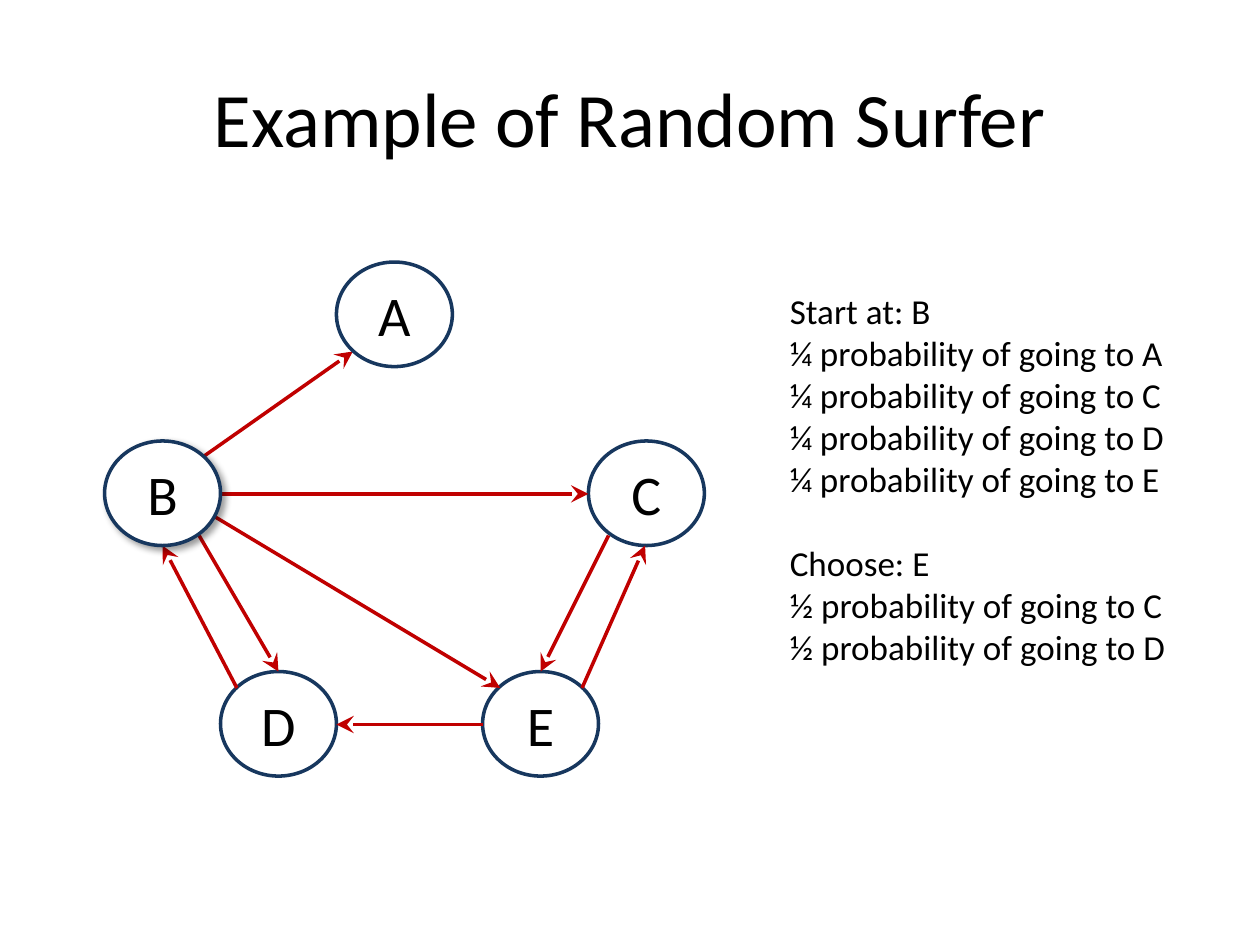
import pptx
import pptx.dml.color
import pptx.enum.shapes
import pptx.enum.text
import pptx.oxml
import pptx.oxml.ns
import pptx.util

Inches = pptx.util.Inches
Pt = pptx.util.Pt
ALIGN = pptx.enum.text.PP_ALIGN
ANCHOR = pptx.enum.text.MSO_ANCHOR

COLORS = {"text": "000000", "node": "FFFFFF", "rim": "17375E", "arrow": "C00000"}
NODE_W, NODE_H = 0.92, 0.83

# Left and top of each page in the graph
NODES = {"A": (2.67, 2.08), "C": (4.67, 3.5), "D": (1.75, 5.33), "E": (3.83, 5.33)}
START = (0.83, 3.5)

# Links between pages: from x, y to x, y
FIRST = (1.62, 3.62, 2.8, 2.79)     # B to A
LINKS = [
    (1.75, 3.92, 4.67, 3.92),       # B to C
    (1.58, 4.25, 2.21, 5.33),       # B to D
    (1.88, 5.46, 1.29, 4.33),       # D to B
    (3.83, 5.75, 2.67, 5.75),       # E to D
    (4.83, 4.25, 4.29, 5.33),       # C to E
    (4.62, 5.46, 5.12, 4.33),       # E to C
    (1.67, 4.08, 3.97, 5.46),       # B to E
]

STEPS = [
    ["Start at: B"] + [f"¼ probability of going to {page}" for page in "ACDE"],
    ["Choose: E", "½ probability of going to C\v½ probability of going to D"],
]


def color(name):
    return pptx.dml.color.RGBColor.from_string(COLORS[name])


def assign(item, values):
    for key, value in values.items():
        setattr(item, key, value)


def style(para, size, align):
    para.alignment = align
    assign(para.font, {"size": Pt(size), "name": "Calibri"})
    para.font.color.rgb = color("text")


def add_xml(parent, body):
    space = pptx.oxml.ns.nsdecls("a")
    parent.append(pptx.oxml.parse_xml(body.replace("XMLNS", space, 1)))


def add_title(slide, text):
    title = slide.shapes.title
    assign(title, {"left": Inches(0.5), "top": Inches(0.3),
                   "width": Inches(9), "height": Inches(1.25)})
    frame = title.text_frame
    frame.text = text
    frame.vertical_anchor = ANCHOR.MIDDLE
    style(frame.paragraphs[0], 44, ALIGN.CENTER)


def add_node(slide, name, left, top):
    node = slide.shapes.add_shape(
        pptx.enum.shapes.MSO_SHAPE.OVAL,
        Inches(left), Inches(top), Inches(NODE_W), Inches(NODE_H))
    node.shadow.inherit = False
    node.fill.solid()
    node.fill.fore_color.rgb = color("node")
    node.line.color.rgb = color("rim")
    node.line.width = Pt(2)
    frame = node.text_frame
    assign(frame, {"text": name, "vertical_anchor": ANCHOR.MIDDLE,
                   "margin_left": 0, "margin_right": 0,
                   "margin_top": 0, "margin_bottom": 0})
    style(frame.paragraphs[0], 32, ALIGN.CENTER)
    return node


def add_shadow(node):
    effects = node._element.spPr.find(pptx.oxml.ns.qn("a:effectLst"))
    add_xml(effects,
            f'<a:outerShdw XMLNS blurRad="{Pt(4)}" dist="{Pt(3)}" dir="2700000" '
            'algn="tl" rotWithShape="0"><a:srgbClr val="000000">'
            '<a:alpha val="40000"/></a:srgbClr></a:outerShdw>')


def add_link(slide, ends):
    link = slide.shapes.add_connector(
        pptx.enum.shapes.MSO_CONNECTOR.STRAIGHT, *map(Inches, ends))
    link.line.color.rgb = color("arrow")
    link.line.width = Pt(2)
    add_xml(link.line._get_or_add_ln(),
            '<a:tailEnd XMLNS type="stealth" w="lg" len="lg"/>')
    add_xml(link._element.spPr, "<a:effectLst XMLNS/>")


def add_steps(slide):
    box = slide.shapes.add_textbox(
        Inches(6.17), Inches(2.25), Inches(3.33), Inches(4.11))
    frame = box.text_frame
    frame.word_wrap = True
    para = frame.paragraphs[0]
    for group, lines in enumerate(STEPS):
        for row, line in enumerate(lines):
            if group or row:
                para = frame.add_paragraph()
            para.text = line
            style(para, 20, ALIGN.LEFT)
            if group and row == 0:
                para.space_before = Pt(24)


def main():
    deck = pptx.Presentation()
    assign(deck, {"slide_width": Inches(10), "slide_height": Inches(7.5)})
    slide = deck.slides.add_slide(deck.slide_layouts[5])
    add_title(slide, "Example of Random Surfer")

    # Graph, with the starting page on top
    add_link(slide, FIRST)
    for name, place in NODES.items():
        add_node(slide, name, *place)
    for ends in LINKS:
        add_link(slide, ends)
    add_shadow(add_node(slide, "B", *START))

    # Walk through the graph
    add_steps(slide)
    deck.save("out.pptx")


if __name__ == "__main__":
    main()
